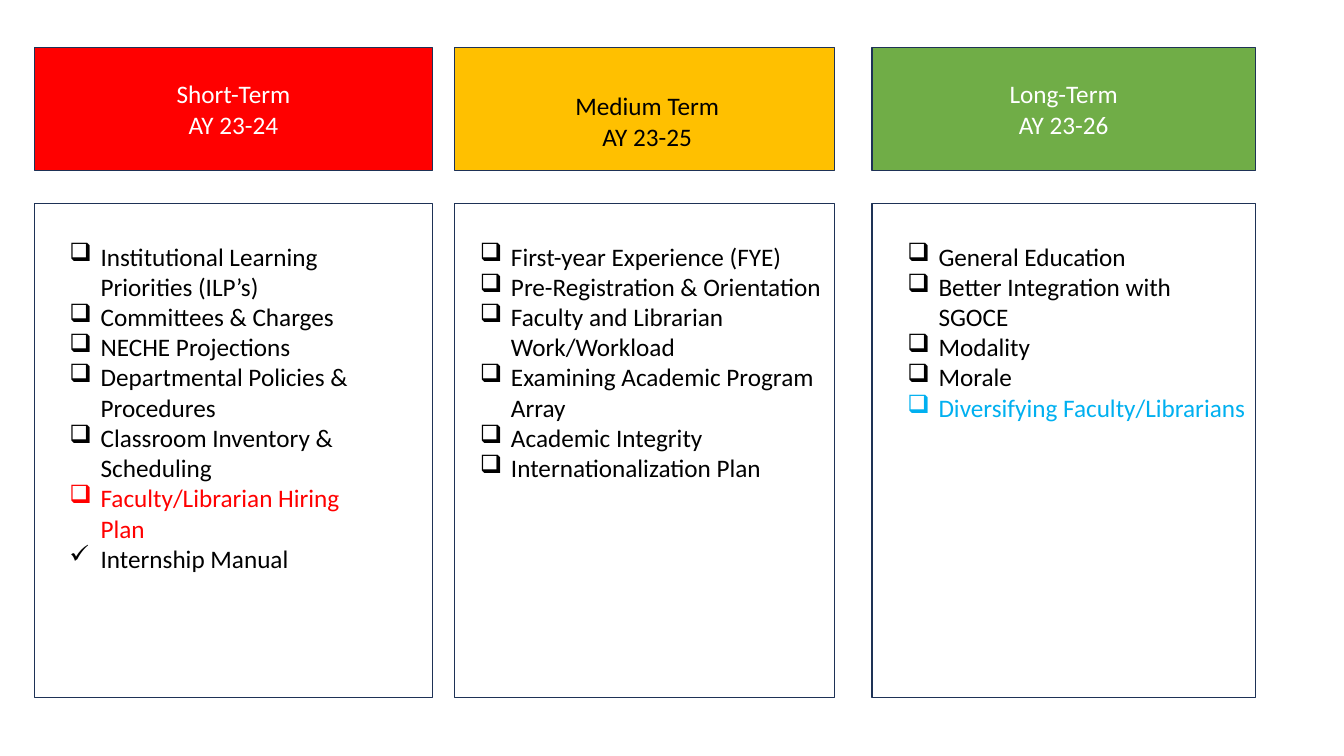
from lxml import etree
from pptx import Presentation
from pptx.dml.color import RGBColor
from pptx.enum.shapes import MSO_SHAPE
from pptx.enum.text import MSO_ANCHOR, PP_ALIGN
from pptx.oxml.ns import qn
from pptx.util import Inches, Pt

RECT = MSO_SHAPE.RECTANGLE
MIDDLE, TOP = MSO_ANCHOR.MIDDLE, MSO_ANCHOR.TOP
CENTER, LEFT = PP_ALIGN.CENTER, PP_ALIGN.LEFT
BLACK, WHITE, NAVY = "000000", "FFFFFF", "1E3256"
RED, AMBER, GREEN, BLUE = "FF0000", "FFC000", "70AD47", "00B0F0"
BOX, TICK, NONE = "❑", "✓", ""
HEAD_TOP, HEAD_H = 0.47, 1.22
BODY_TOP, BODY_H = 2.02, 4.9
LIST_TOP, LIST_H = 2.34, 3.43
INDENT = Inches(0.31)


def color(code):
    return RGBColor.from_string(code)


def write(shape, lines, align, anchor):
    """Fill a shape with lines of (text, bullet, colour)."""
    frame = shape.text_frame
    frame.word_wrap = True
    frame.vertical_anchor = anchor
    for i, (text, mark, ink) in enumerate(lines):
        para = frame.add_paragraph() if i else frame.paragraphs[0]
        para.alignment = align
        run = para.add_run()
        run.text = text
        for name, value in {"size": Pt(18), "name": "Calibri"}.items():
            setattr(run.font, name, value)
        run.font.color.rgb = color(ink)
        if align == LEFT:
            # Lines without a bullet continue the item above
            props = para._p.get_or_add_pPr()
            props.set("marL", str(INDENT))
            props.set("indent", str(-INDENT if mark else 0))
            if mark:
                etree.SubElement(props, qn("a:buChar")).set("char", mark)


prs = Presentation()
prs.slide_width, prs.slide_height = Inches(13.33), Inches(7.5)
slide = prs.slides.add_slide(prs.slide_layouts[6])
shapes = slide.shapes

# Columns: left, width, fill, ink, title, title box, list left, list width, items
terms = [
    (0.34, 3.95, RED, WHITE, ["Short-Term", "AY 23-24"], None, 0.59, 3.3, [
        ("Institutional Learning Priorities (ILP’s)", BOX, BLACK),
        ("Committees & Charges", BOX, BLACK),
        ("NECHE Projections", BOX, BLACK),
        ("Departmental Policies &", BOX, BLACK),
        ("Procedures", NONE, BLACK),
        ("Classroom Inventory & Scheduling", BOX, BLACK),
        ("Faculty/Librarian Hiring Plan", BOX, RED),
        ("Internship Manual", TICK, BLACK)]),
    (4.51, 3.77, AMBER, BLACK, ["Medium Term", "AY 23-25"],
     (5.6, 0.85, 1.64, 0.71), 4.66, 3.62, [
        ("First-year Experience (FYE)", BOX, BLACK),
        ("Pre-Registration & Orientation", BOX, BLACK),
        ("Faculty and Librarian", BOX, BLACK),
        ("Work/Workload", NONE, BLACK),
        ("Examining Academic Program", BOX, BLACK),
        ("Array", NONE, BLACK),
        ("Academic Integrity", BOX, BLACK),
        ("Internationalization Plan", BOX, BLACK)]),
    (8.65, 3.8, GREEN, WHITE, ["Long-Term", "AY 23-26"], None, 8.9, 3.55, [
        ("General Education", BOX, BLACK),
        ("Better Integration with SGOCE", BOX, BLACK),
        ("Modality", BOX, BLACK),
        ("Morale", BOX, BLACK),
        ("Diversifying Faculty/Librarians", BOX, BLUE)]),
]

for left, width, fill, ink, title, spot, list_x, list_w, items in terms:
    # Header and body frames
    head, body = [
        shapes.add_shape(RECT, *map(Inches, (left, top, width, high)))
        for top, high in ((HEAD_TOP, HEAD_H), (BODY_TOP, BODY_H))]
    for frame in (head, body):
        frame.shadow.inherit = False
        frame.line.color.rgb = color(NAVY)
        frame.line.width = Pt(1)
    head.fill.solid()
    head.fill.fore_color.rgb = color(fill)
    body.fill.background()

    # Title, in its own box where it sits below the middle
    place = shapes.add_textbox(*map(Inches, spot)) if spot else head
    write(place, [(line, NONE, ink) for line in title], CENTER,
          TOP if spot else MIDDLE)

    # Checklist
    area = map(Inches, (list_x, LIST_TOP, list_w, LIST_H))
    write(shapes.add_textbox(*area), items, LEFT, TOP)

prs.save("out.pptx")
